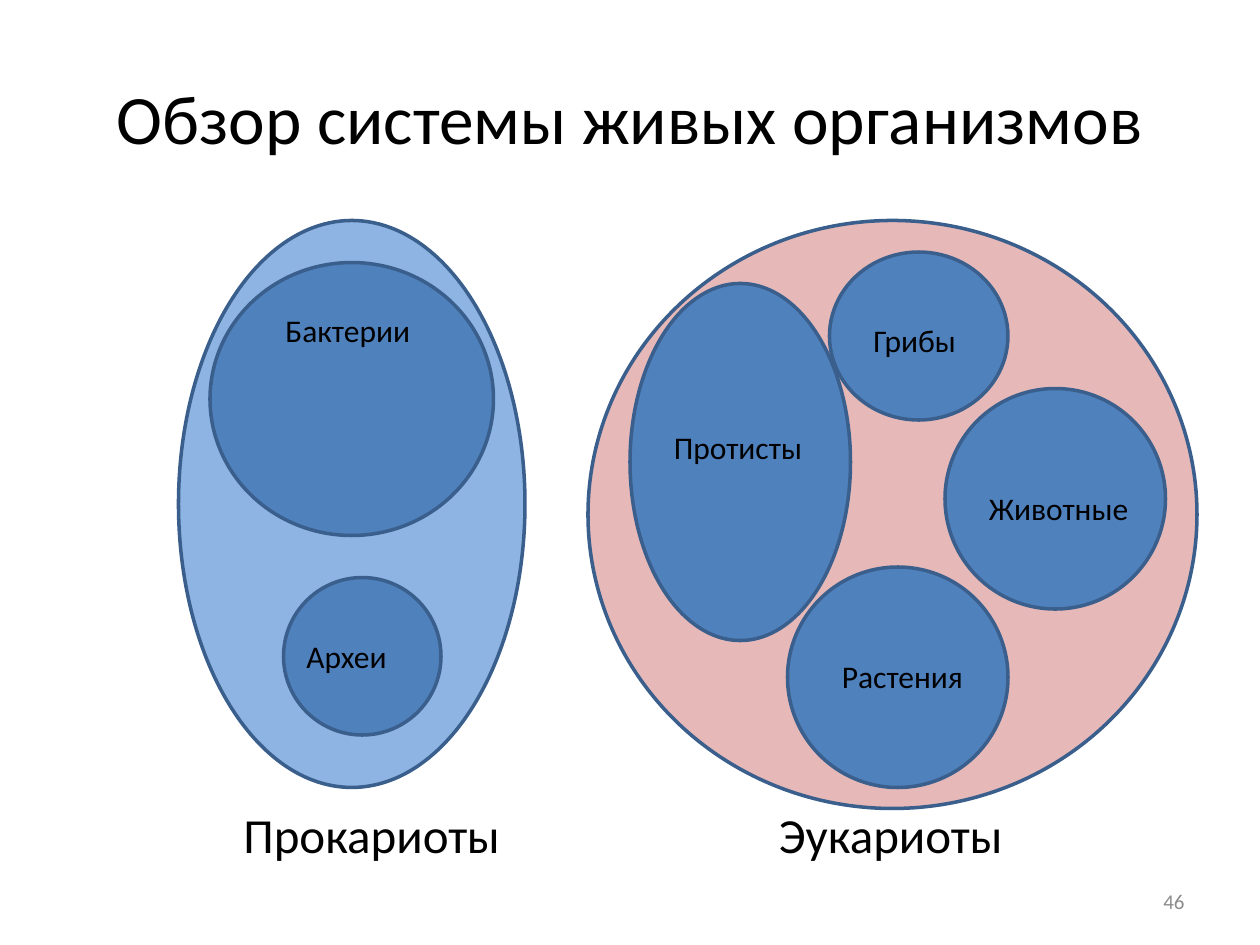
from pptx import Presentation
from pptx.dml.color import RGBColor
from pptx.enum.shapes import MSO_SHAPE as Shape
from pptx.enum.text import MSO_ANCHOR as Anchor, MSO_AUTO_SIZE as Auto, PP_ALIGN as Align
from pptx.util import Emu, Pt

PX = 914400 // 120
BLUE, EDGE = "4F81BD", "3A5F8C"

TITLE = "Обзор системы живых организмов"
NUMBER = "46"
DOMAINS = [
    ("Прокариоты", (220, 760, 290, 68), (170, 210, 330, 540), "8EB4E3"),
    ("Эукариоты", (730, 760, 290, 68), (560, 210, 580, 560), "E6B9B8"),
]
GROUPS = [
    ("Бактерии", (260, 290, 170, 48), (200, 250, 270, 260)),
    ("Археи", (280, 601, 110, 48), (270, 550, 150, 150)),
    ("Протисты", (630, 402, 170, 48), (600, 270, 210, 340)),
    ("Грибы", (820, 300, 110, 48), (790, 240, 170, 160)),
    ("Животные", (930, 460, 170, 48), (900, 370, 210, 210)),
    ("Растения", (790, 620, 170, 48), (750, 540, 210, 210)),
]


def scale(box):
    return [Emu(n * PX) for n in box]


def color(code):
    return RGBColor.from_string(code)


def write(shape, text, size=18, ink="000000", align=Align.LEFT, anchor=Anchor.TOP):
    frame = shape.text_frame
    frame.word_wrap = True
    frame.auto_size = Auto.NONE
    frame.vertical_anchor = anchor
    par = frame.paragraphs[0]
    par.alignment = align
    run = par.add_run()
    run.text = text
    run.font.name = "Calibri"
    run.font.size = Pt(size)
    run.font.color.rgb = color(ink)


def label(slide, text, box, **form):
    write(slide.shapes.add_textbox(*scale(box)), text, **form)


def oval(slide, box, fill):
    shape = slide.shapes.add_shape(Shape.OVAL, *scale(box))
    shape.shadow.inherit = False
    shape.fill.solid()
    shape.fill.fore_color.rgb = color(fill)
    shape.line.color.rgb = color(EDGE)
    shape.line.width = Pt(2)


def main():
    deck = Presentation()
    deck.slide_width, deck.slide_height = scale((1200, 900))
    slide = deck.slides.add_slide(deck.slide_layouts[5])

    title = slide.shapes.title
    title.left, title.top, title.width, title.height = scale((60, 36, 1080, 150))
    write(title, TITLE, size=39.6, align=Align.CENTER, anchor=Anchor.MIDDLE)
    label(slide, NUMBER, (860, 834, 280, 48), size=12, ink="8C8C8C",
          align=Align.RIGHT, anchor=Anchor.MIDDLE)

    for name, spot, box, fill in DOMAINS:
        oval(slide, box, fill)
    for name, spot, box in GROUPS:
        oval(slide, box, BLUE)
    for name, spot, box in GROUPS:
        label(slide, name, spot)
    for name, spot, box, fill in DOMAINS:
        label(slide, name, spot, size=28)

    deck.save("out.pptx")


if __name__ == "__main__":
    main()
